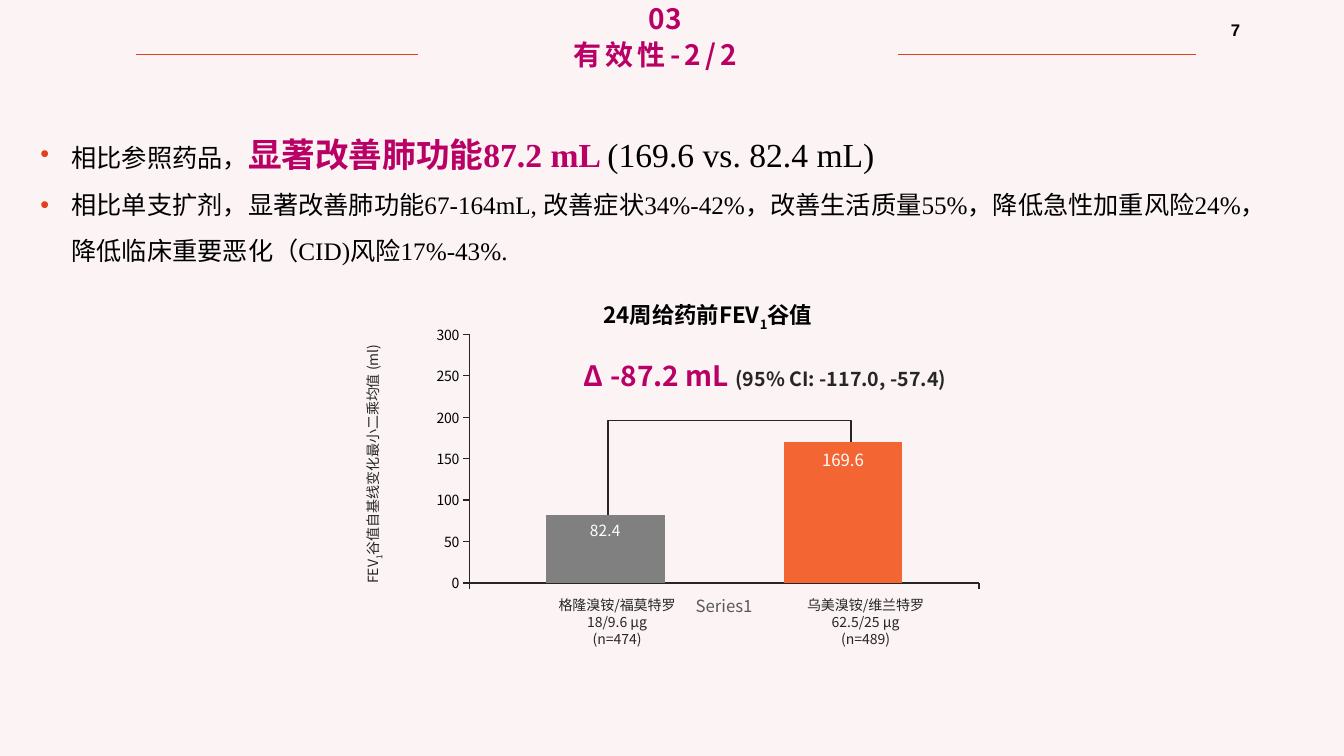
from dataclasses import dataclass, replace

from lxml.etree import SubElement
from pptx import Presentation
from pptx.chart.data import CategoryChartData as ChartData
from pptx.dml.color import RGBColor as RGB
from pptx.enum.chart import XL_CHART_TYPE as Kind, XL_LABEL_POSITION as Spot
from pptx.enum.chart import XL_TICK_MARK as Tick
from pptx.enum.shapes import MSO_CONNECTOR as Link, MSO_SHAPE as Form
from pptx.enum.text import MSO_ANCHOR as Anchor, MSO_AUTO_SIZE as Fit, PP_ALIGN as Align
from pptx.oxml import parse_xml
from pptx.oxml.ns import nsdecls, qn
from pptx.util import Inches, Pt


@dataclass(frozen=True)
class Type:
    size: float
    color: str
    bold: bool = False
    font: str = "Noto Sans CJK SC"
    base: int = 0
    space: int = 0


class Theme:
    back, rule, ink, dot = "FCF3F5", "E4401D", "262626", "E43F1C"
    gray, orange, white = "808080", "F36633", "FFFFFF"
    cjk = "Noto Sans CJK SC"
    mark = Type(20, "B80065", True)
    title = replace(mark, space=300)
    body = Type(18, "000000", font="Times New Roman")
    large = replace(body, size=24)
    strong = replace(large, color="B80065", bold=True)
    page = Type(12, "000000", True, "Arial")
    head = Type(16, "000000", True)
    range = Type(14, ink, True)
    note = Type(10, ink)
    tick = Type(10, "000000")
    group = Type(12, "595959")


class Page:
    def __init__(self, deck, theme):
        self.theme = theme
        self.slide = deck.slides.add_slide(deck.slide_layouts[1])
        self.shapes = self.slide.shapes
        self.slide.background.fill.solid()
        self.slide.background.fill.fore_color.rgb = RGB.from_string(theme.back)

    def style(self, font, kind):
        font.size, font.bold, font.name = Pt(kind.size), kind.bold, kind.font
        font.color.rgb = RGB.from_string(kind.color)

    def stroke(self, line, color, width):
        line.color.rgb = RGB.from_string(color)
        line.width = Pt(width)

    def fill(self, shape, paras, align=Align.CENTER, anchor=Anchor.TOP,
             inset=(0.1, 0.05), leading=1):
        """Put text in a shape; each paragraph is a list of (text, type) pairs."""
        frame = shape.text_frame
        frame.word_wrap, frame.auto_size = True, Fit.NONE
        frame.vertical_anchor = anchor
        frame.margin_left = frame.margin_right = Inches(inset[0])
        frame.margin_top = frame.margin_bottom = Inches(inset[1])
        for i, parts in enumerate(paras):
            para = frame.add_paragraph() if i else frame.paragraphs[0]
            para.alignment, para.line_spacing = align, leading
            para.space_before = Pt(0)
            for text, kind in parts:
                run = para.add_run()
                run.text = text
                self.style(run.font, kind)
                props = run._r.get_or_add_rPr()
                SubElement(props, qn("a:ea")).set("typeface", self.theme.cjk)
                if kind.base:
                    props.set("baseline", str(kind.base * 1000))
                if kind.space:
                    props.set("spc", str(kind.space))
        return shape

    def place(self, shape, box):
        shape.left, shape.top, shape.width, shape.height = map(Inches, box)
        return shape

    def title(self, box, text):
        self.fill(self.place(self.shapes.title, box),
                  [[(text, self.theme.title)]], inset=(0, 0))

    def bullets(self, box, paras):
        body = self.place(self.slide.placeholders[1], box)
        self.fill(body, paras, Align.LEFT, Anchor.MIDDLE, (0, 0.05), 1.5)
        for para in body.text_frame.paragraphs:
            props = para._p.get_or_add_pPr()
            props.set("marL", str(Inches(0.31)))
            props.set("indent", str(-Inches(0.31)))
            color = SubElement(props, qn("a:buClr"))
            SubElement(color, qn("a:srgbClr")).set("val", self.theme.dot)
            SubElement(props, qn("a:buFont")).set("typeface", "Arial")
            SubElement(props, qn("a:buChar")).set("char", "•")

    def text(self, box, paras, **look):
        return self.fill(self.shapes.add_textbox(*map(Inches, box)), paras, **look)

    def label(self, box, paras):
        shape = self.shapes.add_shape(Form.ROUNDED_RECTANGLE, *map(Inches, box))
        shape.shadow.inherit = False
        shape.fill.background()
        shape.line.fill.background()
        self.fill(shape, paras, anchor=Anchor.MIDDLE, inset=(0.08, 0.08))

    def rule(self, left, right, top):
        line = self.shapes.add_connector(
            Link.STRAIGHT, *map(Inches, (left, top, right, top)))
        self.stroke(line.line, self.theme.rule, 1.25)
        SubElement(line._element.spPr, qn("a:effectLst"))

    def bracket(self, *points):
        start, *rest = [(Inches(x), Inches(y)) for x, y in points]
        pen = self.shapes.build_freeform(*start)
        pen.add_line_segments(rest, close=False)
        shape = pen.convert_to_shape()
        shape.shadow.inherit = False
        shape.fill.background()
        self.stroke(shape.line, self.theme.ink, 1)

    def columns(self, box, group, bars, plot):
        """Draw one group of columns; bars are (name, value, color, label size)."""
        data = ChartData(number_format="0.0")
        data.categories = [group]
        for name, value, *_ in bars:
            data.add_series(name, [value])
        chart = self.shapes.add_chart(
            Kind.COLUMN_CLUSTERED, *map(Inches, box), data).chart
        chart.has_legend = chart.has_title = False
        self.style(chart.font, self.theme.tick)
        cat, val = chart.category_axis, chart.value_axis
        for axis, kind in ((cat, self.theme.group), (val, self.theme.tick)):
            axis.has_major_gridlines = False
            axis.major_tick_mark, axis.minor_tick_mark = Tick.OUTSIDE, Tick.NONE
            self.stroke(axis.format.line, self.theme.ink, 1)
            self.style(axis.tick_labels.font, kind)
        val.minimum_scale, val.maximum_scale, val.major_unit = 0, 300, 50
        val.tick_labels.number_format = '0;"–"0'
        val.tick_labels.number_format_is_linked = False
        cols = chart.plots[0]
        cols.gap_width, cols.overlap = 129, -100
        cols.vary_by_categories = False
        for series, (_, _, color, size) in zip(cols.series, bars):
            series.format.fill.solid()
            series.format.fill.fore_color.rgb = RGB.from_string(color)
            tags = series.data_labels
            tags.show_value, tags.position = True, Spot.INSIDE_END
            tags.number_format, tags.number_format_is_linked = "0.0", False
            self.style(tags.font, Type(size, self.theme.white))
        area = chart._chartSpace.chart.plotArea
        for old in area.findall(qn("c:layout")):
            area.remove(old)
        sizes = "".join(f'<c:{k} val="{v}"/>' for k, v in zip("xywh", plot))
        area.insert(0, parse_xml(
            f'<c:layout {nsdecls("c")}><c:manualLayout><c:layoutTarget val="inner"/>'
            f'<c:xMode val="edge"/><c:yMode val="edge"/>{sizes}'
            '</c:manualLayout></c:layout>'))


def main():
    deck = Presentation()
    deck.slide_width, deck.slide_height = Inches(13.33), Inches(7.5)
    theme = Theme()
    page = Page(deck, theme)

    page.bullets((0.4, 0.89, 12.39, 1.98), [
        [("相比参照药品，", theme.body),
         ("显著改善肺功能87.2 mL ", theme.strong),
         ("(169.6 vs. 82.4 mL)", theme.large)],
        [("相比单支扩剂，显著改善肺功能67-164mL, 改善症状34%-42%，改善生活质量55%，"
          "降低急性加重风险24%，降低临床重要恶化（CID)风险17%-43%.", theme.body)],
    ])
    page.text((3.62, -0.03, 5.96, 0.44), [[("03", theme.mark)]])
    page.title((5.59, 0.37, 1.82, 0.34), "有效性-2/2")
    for left, right in ((8.91, 11.86), (1.35, 4.15)):
        page.rule(left, right, 0.54)
    page.text((12.11, 0.15, 1.21, 0.4), [[("7", theme.page)]], align=Align.LEFT)

    page.bracket((6.03, 5.16), (6.03, 4.17), (8.44, 4.17), (8.44, 4.42))
    page.text((5.33, 3.55, 4.52, 0.34),
              [[("Δ -87.2 mL ", theme.mark), ("(95% CI: -117.0, -57.4)", theme.range)]],
              anchor=Anchor.MIDDLE, inset=(0, 0))
    for left, width, lines in (
            (7.17, 2.83, ("乌美溴铵/维兰特罗", "62.5/25 μg", "(n=489)")),
            (4.78, 2.68, ("格隆溴铵/福莫特罗", "18/9.6 μg", "(n=474)"))):
        page.text((left, 5.87, width, 0.74), [[(line, theme.note)] for line in lines])
    side = page.text((3.62, 3.03, 0.44, 3.15),
                     [[("FEV", theme.note), ("1", replace(theme.note, base=-25)),
                       ("谷值自基线变化最小二乘均值 (ml)", theme.note)]], inset=(0, 0))
    side.text_frame._txBody.bodyPr.set("vert", "vert270")
    page.label((5.71, 2.97, 2.62, 0.34),
               [[("24周给药前FEV", theme.head), ("1", replace(theme.head, base=-25)),
                 ("谷值", theme.head)]])
    page.columns((3.94, 2.98, 5.95, 3.38), "Series1",
                 [("Series 1", 82.4, theme.gray, 11),
                  ("Series 2", 169.6, theme.orange, 12)],
                 (0.12, 0.1, 0.85, 0.73))
    deck.save("out.pptx")


if __name__ == "__main__":
    main()
